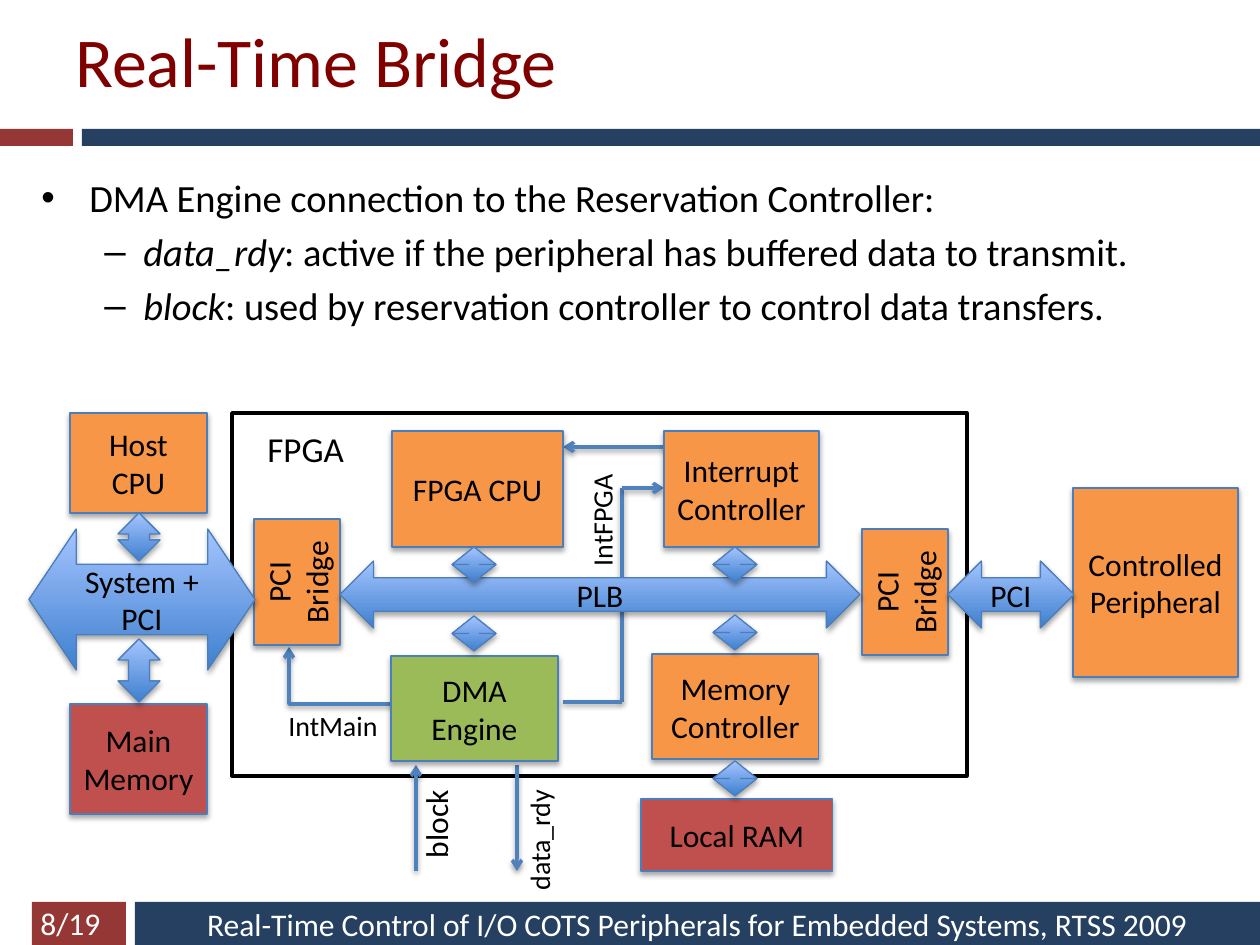
from lxml import etree
from pptx import Presentation
from pptx.dml.color import RGBColor
from pptx.enum.shapes import MSO_CONNECTOR as CONN, MSO_SHAPE as SHAPE
from pptx.enum.text import MSO_ANCHOR as ANCHOR, PP_ALIGN as ALIGN
from pptx.oxml.ns import qn
from pptx.util import Inches, Pt

PX = 7257
BLACK = RGBColor(0x00, 0x00, 0x00)
WHITE = RGBColor(0xFF, 0xFF, 0xFF)
MAROON = RGBColor(0x80, 0x00, 0x00)
BRICK = RGBColor(0x95, 0x37, 0x35)
NAVY = RGBColor(0x25, 0x40, 0x61)
ORANGE = RGBColor(0xF7, 0x96, 0x46)
GREEN = RGBColor(0x9B, 0xBB, 0x59)
RED = RGBColor(0xC0, 0x50, 0x4D)
EDGE = RGBColor(0x4B, 0x7E, 0xBC)
WIRE = RGBColor(0x4F, 0x81, 0xBD)
DEEP = RGBColor(0x3F, 0x80, 0xCE)
PALE = RGBColor(0xA4, 0xC4, 0xFF)


def add_shadow(sp, alpha, dist):
    spPr = sp._element.spPr
    effects = etree.SubElement(spPr, qn("a:effectLst"))
    outer = etree.SubElement(effects, qn("a:outerShdw"), blurRad="40000",
                             dist=str(dist), dir="5400000", rotWithShape="0")
    clr = etree.SubElement(outer, qn("a:srgbClr"), val="000000")
    etree.SubElement(clr, qn("a:alpha"), val=str(alpha * 1000))


def add_item(text, at, kind=None, fill=None, line=None, width=0.75, size=18,
             color=BLACK, align=ALIGN.CENTER, anchor=ANCHOR.MIDDLE, rot=0,
             wrap=True, shadow=False, adj=()):
    pos = [v * PX for v in at]
    if kind is None:
        sp = s.shapes.add_textbox(*pos)
    else:
        sp = s.shapes.add_shape(kind, *pos)
        for i, value in enumerate(adj):
            sp.adjustments[i] = value
        if fill is None:
            sp.fill.gradient()
            sp.fill.gradient_angle = 90
            for stop, shade in zip(sp.fill.gradient_stops, (DEEP, PALE)):
                stop.color.rgb = shade
        else:
            sp.fill.solid()
            sp.fill.fore_color.rgb = fill
        if line is None:
            sp.line.fill.background()
        else:
            sp.line.color.rgb = line
            sp.line.width = Pt(width)
        if shadow:
            add_shadow(sp, 35, 23000)
        else:
            sp.shadow.inherit = False
    sp.rotation = rot
    tf = sp.text_frame
    tf.word_wrap = wrap
    tf.vertical_anchor = anchor
    for i, words in enumerate(text.split("\n") if text else []):
        p = tf.add_paragraph() if i else tf.paragraphs[0]
        p.alignment = align
        r = p.add_run()
        r.text = words
        r.font.name = "Calibri"
        r.font.size = Pt(size)
        r.font.color.rgb = color
    return sp


prs = Presentation()
prs.slide_width = Inches(10)
prs.slide_height = Inches(7.5)
s = prs.slides.add_slide(prs.slide_layouts[6])

for text, at, fill in [
    ("", (0, 129, 73, 17), BRICK),
    ("", (82, 129, 1178, 17), NAVY),
    ("", (32, 902, 94, 43), BRICK),
    ("Real-Time Control of I/O COTS Peripherals for Embedded Systems, RTSS 2009",
     (135, 902, 1125, 43), NAVY),
]:
    add_item(text, at, SHAPE.RECTANGLE, fill, color=WHITE)

add_item("Real-Time Bridge", (63, -20, 1134, 158), size=40, color=MAROON,
         align=ALIGN.LEFT)

tf = add_item("", (29, 168, 1210, 275), anchor=ANCHOR.TOP).text_frame
bullets = [
    (0, "•", 48, 48, "", "DMA Engine connection to the Reservation Controller:"),
    (1, "–", 102, 39, "data_rdy",
     ": active if the peripheral has buffered data to transmit."),
    (1, "–", 102, 39, "block",
     ": used by reservation controller to control data transfers."),
]
for i, (level, mark, margin, hang, term, rest) in enumerate(bullets):
    p = tf.add_paragraph() if i else tf.paragraphs[0]
    p.level = level
    pPr = p._p.get_or_add_pPr()
    pPr.set("marL", str(margin * PX))
    pPr.set("indent", str(-hang * PX))
    etree.SubElement(pPr, qn("a:buFont"), typeface="Arial")
    etree.SubElement(pPr, qn("a:buChar"), char=mark)
    if i:
        p.space_before = Pt(4.4)
    for words, italic in ((term, True), (rest, False)):
        if words:
            r = p.add_run()
            r.text = words
            r.font.name = "Calibri"
            r.font.size = Pt(22)
            r.font.italic = italic
            r.font.color.rgb = BLACK

add_item("", (232, 413, 735, 363), SHAPE.RECTANGLE, WHITE, BLACK, width=2)

for kind, ends, arrow in [
    (CONN.STRAIGHT, (622, 702, 622, 488), False),
    (CONN.STRAIGHT, (563, 702, 622, 702), False),
    (CONN.STRAIGHT, (622, 488, 664, 488), True),
    (CONN.STRAIGHT, (666, 447, 563, 447), True),
    (CONN.ELBOW, (289, 647, 393, 704), True),
    (CONN.STRAIGHT, (416, 871, 416, 765), True),
    (CONN.STRAIGHT, (517, 765, 517, 871), True),
]:
    c = s.shapes.add_connector(kind, *[v * PX for v in ends])
    c.line.color.rgb = WIRE
    c.line.width = Pt(2)
    if kind == CONN.ELBOW:
        spPr = c._element.spPr
        spPr.find(qn("a:prstGeom")).set("prst", "bentConnector2")
        spPr.find(qn("a:xfrm")).set("rot", "10800000")
    if arrow:
        etree.SubElement(c.line._get_or_add_ln(), qn("a:tailEnd"), type="arrow")
    add_shadow(c, 38, 20000)

for text, at, fill, rot in [
    ("FPGA CPU", (392, 431, 171, 116), ORANGE, 0),
    ("Interrupt\nController", (664, 431, 155, 116), ORANGE, 0),
    ("DMA Engine", (391, 656, 167, 105), GREEN, 0),
    ("Memory\nController", (652, 654, 167, 105), ORANGE, 0),
    ("Local RAM", (641, 799, 192, 72), RED, 0),
    ("PCI Bridge", (234, 539, 126, 86), ORANGE, 270),
    ("PCI Bridge", (842, 549, 126, 86), ORANGE, 270),
    ("Host CPU", (70, 413, 137, 100), ORANGE, 0),
    ("Main Memory", (70, 704, 137, 110), RED, 0),
    ("Controlled\nPeripheral", (1073, 488, 165, 189), ORANGE, 0),
]:
    add_item(text, at, SHAPE.RECTANGLE, fill, EDGE, rot=rot, shadow=True)

for text, at, head in [
    ("System + PCI", (29, 529, 226, 141), 0.335),
    ("PLB", (340, 561, 520, 67), 0.5),
    ("PCI", (948, 561, 126, 67), 0.5),
]:
    add_item(text, at, SHAPE.LEFT_RIGHT_ARROW, line=EDGE, shadow=True,
             adj=(0.5, head))

for at, head in [
    ((118, 513, 42, 48), 0.5),
    ((118, 639, 42, 63), 0.5),
    ((452, 547, 44, 35), 0.245),
    ((452, 616, 44, 35), 0.245),
    ((713, 547, 44, 35), 0.245),
    ((713, 615, 44, 35), 0.245),
    ((713, 761, 44, 35), 0.245),
]:
    add_item("", at, SHAPE.UP_DOWN_ARROW, line=EDGE, shadow=True, adj=(0.5, head))

for text, at, size, rot, color in [
    ("FPGA", (255, 421, 103, 55), 20, 0, BLACK),
    ("IntMain", (276, 702, 116, 47), 16, 0, BLACK),
    ("IntFPGA", (543, 496, 118, 47), 16, 270, BLACK),
    ("block", (388, 798, 95, 50), 18, 270, BLACK),
    ("data_rdy", (476, 816, 127, 47), 16, 270, BLACK),
    ("8/19", (28, 898, 86, 50), 18, 0, WHITE),
]:
    add_item(text, at, size=size, rot=rot, color=color, align=ALIGN.LEFT,
             anchor=ANCHOR.TOP, wrap=False)

prs.save("out.pptx")
